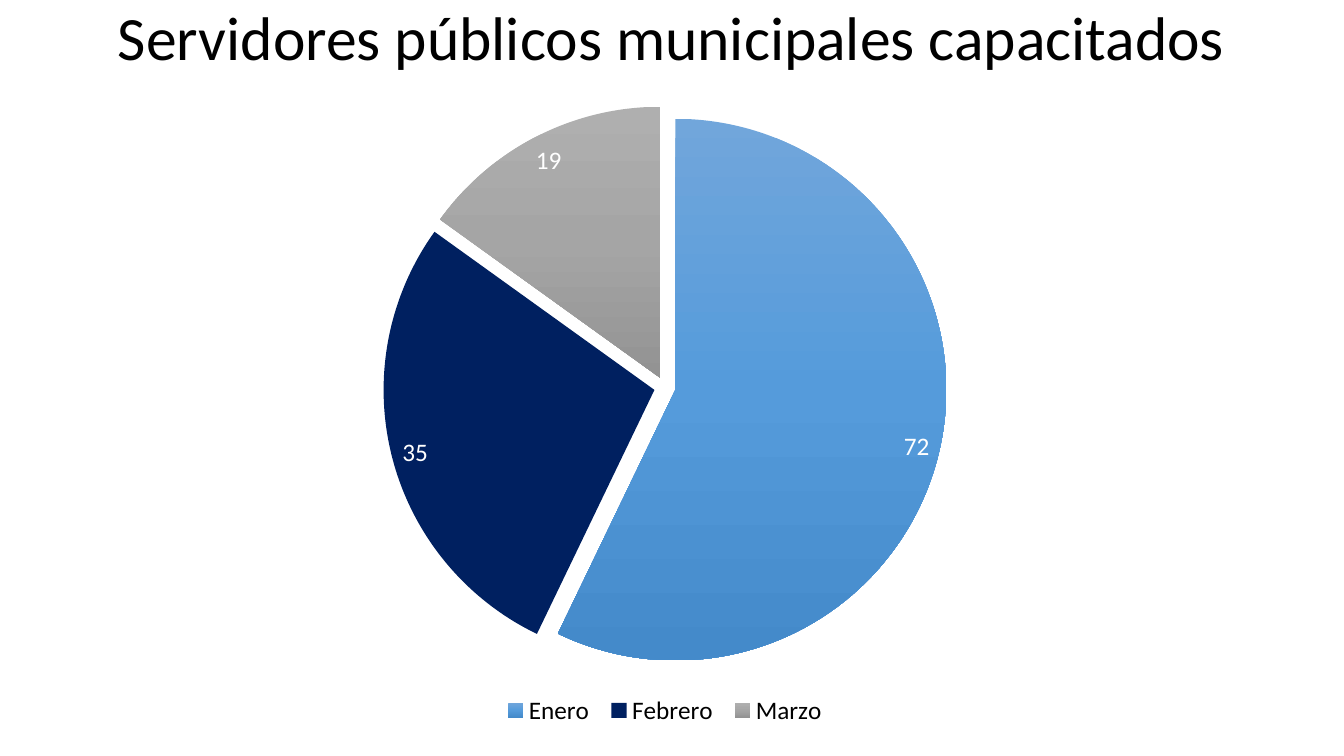
from copy import deepcopy

from lxml import etree
from pptx import Presentation
from pptx.chart.data import CategoryChartData
from pptx.dml.color import RGBColor
from pptx.enum.chart import XL_CHART_TYPE, XL_LABEL_POSITION, XL_LEGEND_POSITION
from pptx.enum.text import MSO_ANCHOR, PP_ALIGN
from pptx.oxml.ns import qn
from pptx.util import Pt

PIE = XL_CHART_TYPE.PIE
BEST_FIT = XL_LABEL_POSITION.BEST_FIT
LEGEND_BOTTOM = XL_LEGEND_POSITION.BOTTOM
TOP = MSO_ANCHOR.TOP
CENTER = PP_ALIGN.CENTER

BLACK = RGBColor(0x00, 0x00, 0x00)
WHITE = RGBColor(0xFF, 0xFF, 0xFF)
NAVY = RGBColor(0x00, 0x20, 0x60)
BLUES = [RGBColor(0x71, 0xA6, 0xDB), RGBColor(0x55, 0x9B, 0xDB), RGBColor(0x44, 0x8A, 0xCA)]
GRAYS = [RGBColor(0xAF, 0xAF, 0xAF), RGBColor(0xA5, 0xA5, 0xA5), RGBColor(0x93, 0x93, 0x93)]


def format_font(font, name="Calibri", size=18, color=BLACK):
    font.name = name
    font.size = Pt(size)
    font.color.rgb = color


def fill_slice(fill, colors):
    if len(colors) == 1:
        fill.solid()
        fill.fore_color.rgb = colors[0]
        return
    fill.gradient()
    fill.gradient_angle = 270
    first_stop = fill.gradient_stops[0]._gs
    for _ in colors[2:]:
        first_stop.addnext(deepcopy(first_stop))
    for index, (stop, color) in enumerate(zip(fill.gradient_stops, colors)):
        stop.position = index / (len(colors) - 1)
        stop.color.rgb = color


class SlideBuilder:
    def __init__(self, slide, font_name="Calibri"):
        self.slide = slide
        self.font_name = font_name

    def text(self, text, left, top, width, height, size=18, color=BLACK,
             align=CENTER, anchor=TOP, line_spacing=0.9):
        shape = self.slide.shapes.add_textbox(Pt(left), Pt(top), Pt(width), Pt(height))
        frame = shape.text_frame
        frame.word_wrap = True
        frame.vertical_anchor = anchor
        paragraph = frame.paragraphs[0]
        paragraph.alignment = align
        paragraph.line_spacing = line_spacing
        run = paragraph.add_run()
        run.text = text
        format_font(run.font, self.font_name, size, color)

    def pie(self, slices, left, top, width, height, size=18, explosion=4):
        data = CategoryChartData()
        data.categories = [name for name, _, _ in slices]
        data.add_series("Series 1", [value for _, value, _ in slices])
        chart = self.slide.shapes.add_chart(
            PIE, Pt(left), Pt(top), Pt(width), Pt(height), data).chart
        chart.has_title = False
        format_font(chart.font, self.font_name, size)
        chart.has_legend = True
        chart.legend.position = LEGEND_BOTTOM
        chart.legend.include_in_layout = False
        format_font(chart.legend.font, self.font_name, size)

        plot = chart.plots[0]
        plot.vary_by_categories = True
        series = plot.series[0]
        offset = etree.Element(qn("c:explosion"), val=str(explosion))
        series._element.find(qn("c:tx")).addnext(offset)
        for index, (_, _, colors) in enumerate(slices):
            fill_slice(series.points[index].format.fill, colors)

        plot.has_data_labels = True
        labels = plot.data_labels
        labels.show_value = True
        labels.show_percentage = False
        labels.position = BEST_FIT
        format_font(labels.font, self.font_name, size, WHITE)


def main():
    presentation = Presentation()
    presentation.slide_width = Pt(960)
    presentation.slide_height = Pt(540)
    builder = SlideBuilder(presentation.slides.add_slide(presentation.slide_layouts[6]))
    builder.pie(
        [("Enero ", 72, BLUES), ("Febrero ", 35, [NAVY]), ("Marzo", 19, GRAYS)],
        66, 65.5, 818, 456.5)
    builder.text("Servidores públicos municipales capacitados", 66, 1.5, 828, 104.4, size=44)
    presentation.save("out.pptx")


if __name__ == "__main__":
    main()
